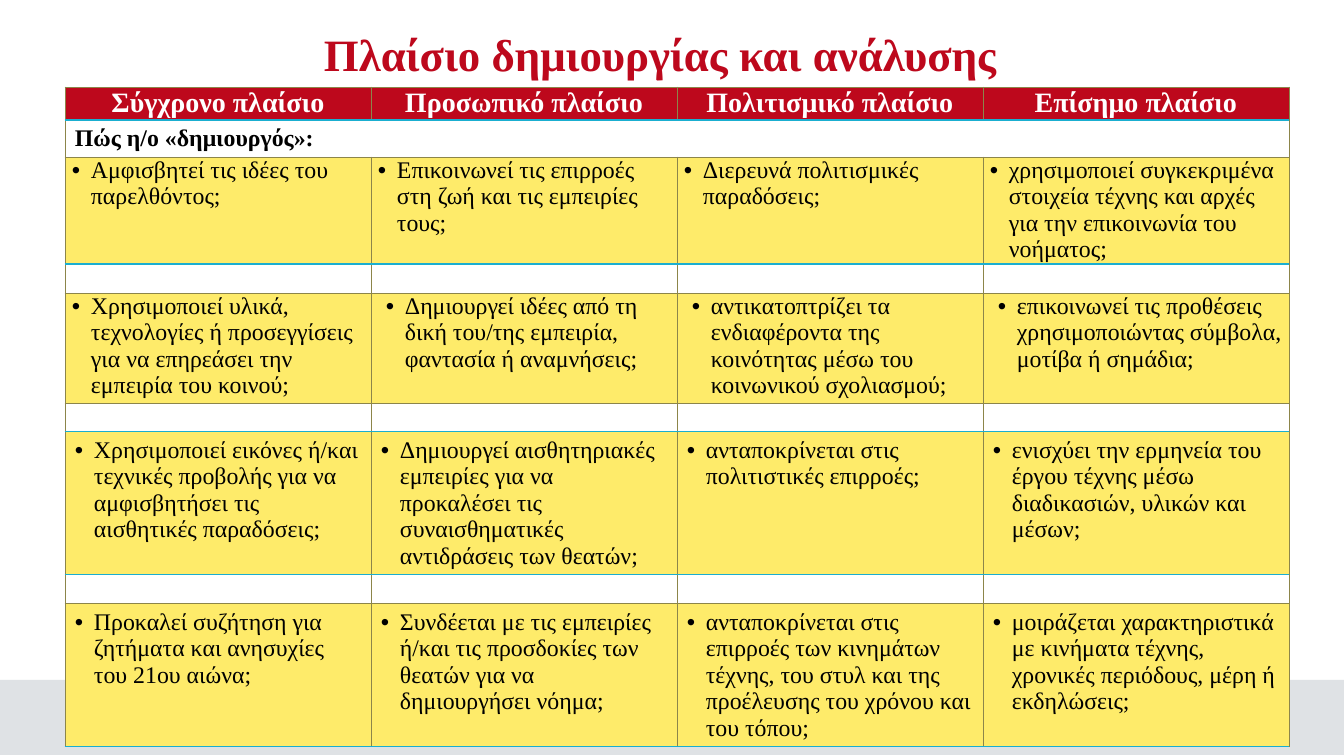
import pptx
import pptx.util
import pptx.dml.color
import pptx.enum.shapes
import pptx.enum.text
import pptx.oxml
import pptx.oxml.ns

RGB = pptx.dml.color.RGBColor
RED = RGB(0xBD, 0x08, 0x1C)
YELLOW = RGB(0xFE, 0xEB, 0x6A)
WHITE = RGB(0xFF, 0xFF, 0xFF)
BLACK = RGB(0, 0, 0)
GREY = RGB(0xDF, 0xE2, 0xE5)
CYAN = RGB(0x1A, 0xAE, 0xD0)
LINE = RGB(0x8C, 0x85, 0x4A)

FONT = "Times New Roman"
ALIGN = pptx.enum.text.PP_ALIGN
ANCHOR = pptx.enum.text.MSO_ANCHOR
TITLE = "Πλαίσιο δημιουργίας και ανάλυσης"
HEADERS = ["Σύγχρονο πλαίσιο", "Προσωπικό πλαίσιο", "Πολιτισμικό πλαίσιο", "Επίσημο πλαίσιο"]
QUESTION = "Πώς η/ο «δημιουργός»:"
BLOCKS = [
    ["Αμφισβητεί τις ιδέες του παρελθόντος;",
     "Επικοινωνεί τις επιρροές στη ζωή και τις εμπειρίες τους;",
     "Διερευνά πολιτισμικές παραδόσεις;",
     "χρησιμοποιεί συγκεκριμένα στοιχεία τέχνης και αρχές για την επικοινωνία του νοήματος;"],
    ["Χρησιμοποιεί υλικά, τεχνολογίες ή προσεγγίσεις για να επηρεάσει την εμπειρία του κοινού;",
     "Δημιουργεί ιδέες από τη δική του/της εμπειρία, φαντασία ή αναμνήσεις;",
     "αντικατοπτρίζει τα ενδιαφέροντα της κοινότητας μέσω του κοινωνικού σχολιασμού;",
     "επικοινωνεί τις προθέσεις χρησιμοποιώντας σύμβολα, μοτίβα ή σημάδια;"],
    ["Χρησιμοποιεί εικόνες ή/και τεχνικές προβολής για να αμφισβητήσει τις αισθητικές παραδόσεις;",
     "Δημιουργεί αισθητηριακές εμπειρίες για να προκαλέσει τις συναισθηματικές αντιδράσεις των θεατών;",
     "ανταποκρίνεται στις πολιτιστικές επιρροές;",
     "ενισχύει την ερμηνεία του έργου τέχνης μέσω διαδικασιών, υλικών και μέσων;"],
    ["Προκαλεί συζήτηση για ζητήματα και ανησυχίες του 21ου αιώνα;",
     "Συνδέεται με τις εμπειρίες ή/και τις προσδοκίες των θεατών για να δημιουργήσει νόημα;",
     "ανταποκρίνεται στις επιρροές των κινημάτων τέχνης, του στυλ και της προέλευσης του χρόνου και του τόπου;",
     "μοιράζεται χαρακτηριστικά με κινήματα τέχνης, χρονικές περιόδους, μέρη ή εκδηλώσεις;"],
]
BLOCK_HEIGHTS = [107, 110, 143, 143]
BLOCK_MARGINS = [(7, 0), (7, 0), (10, 5), (10, 5)]
HEADER_H, QUESTION_H, GAP_H = 33, 37, 29
COL_W, TABLE_X, TABLE_Y = 306, 65, 87
BULLET_INDENT = 19
CYAN_EDGES = {1, 3, 6, 7, 9}


def px(n):
    """Turn pixels into EMU."""
    return round(n * 914400 / 100.8)


def write(tf, text, size=17, color=BLACK, bold=False, align=ALIGN.LEFT, spacing=None, indent=0):
    """Write one formatted paragraph, bulleted when indented."""
    p = tf.paragraphs[0]
    p.alignment = align
    p.line_spacing = spacing
    if indent:
        pPr = p._p.get_or_add_pPr()
        pPr.set("marL", str(px(indent)))
        pPr.set("indent", str(-px(BULLET_INDENT)))
        for tag, attr, value in (("buFont", "typeface", "Arial"), ("buChar", "char", "•")):
            pptx.oxml.ns.qn("a:" + tag)
            pPr.append(pptx.oxml.parse_xml(
                f'<a:{tag} {pptx.oxml.ns.nsdecls("a")} {attr}="{value}"/>'))
    r = p.add_run()
    r.text = text
    r.font.name = FONT
    r.font.size = pptx.util.Pt(size)
    r.font.bold = bold
    r.font.color.rgb = color


def edge(cell, side, color, width):
    """Draw one border of a cell."""
    cell._tc.get_or_add_tcPr().append(pptx.oxml.parse_xml(
        f'<a:ln{side} {pptx.oxml.ns.nsdecls("a")} w="{pptx.util.Pt(width)}">'
        f'<a:solidFill><a:srgbClr val="{color}"/></a:solidFill></a:ln{side}>'))


def style(cell, row, fill, margins):
    """Set the borders, fill and margins of a cell."""
    for side, index in (("L", None), ("R", None), ("T", row), ("B", row + 1)):
        cyan = index in CYAN_EDGES
        edge(cell, side, CYAN if cyan else LINE, 1 if cyan else 0.5)
    cell.fill.solid()
    cell.fill.fore_color.rgb = fill
    cell.margin_left = cell.margin_right = px(margins[0])
    cell.margin_top = cell.margin_bottom = px(margins[1])


def add_table(s):
    """Add the table of frameworks."""
    rows = [(HEADER_H, RED, (6, 0), HEADERS), (QUESTION_H, WHITE, (10, 5), [QUESTION] + [""] * 3)]
    for i, block in enumerate(BLOCKS):
        if i:
            rows.append((GAP_H, WHITE, (7, 0), [""] * 4))
        rows.append((BLOCK_HEIGHTS[i], YELLOW, BLOCK_MARGINS[i], block))
    height = sum(row[0] for row in rows)
    table = s.shapes.add_table(len(rows), 4, px(TABLE_X), px(TABLE_Y), px(4 * COL_W), px(height)).table
    table.first_row = table.horz_banding = False
    for col in table.columns:
        col.width = px(COL_W)
    for y, (row_h, fill, margins, texts) in enumerate(rows):
        table.rows[y].height = px(row_h)
        for x, text in enumerate(texts):
            cell = table.cell(y, x)
            style(cell, y, fill, margins)
            tf = cell.text_frame
            if not text:
                tf.paragraphs[0]._p.get_or_add_endParaRPr().set("sz", "1000")
            elif y == 0:
                cell.vertical_anchor = ANCHOR.MIDDLE
                write(tf, text, size=20, color=WHITE, bold=True, align=ALIGN.CENTER)
            elif y == 1:
                write(tf, text, bold=True)
            else:
                shifted = texts is BLOCKS[1] and x > 0
                write(tf, text, indent=BULLET_INDENT + (8 if shifted else 0))
    table.cell(1, 0).merge(table.cell(1, 3))


def main():
    """Build the slide."""
    prs = pptx.Presentation()
    prs.slide_width, prs.slide_height = px(1344), px(756)
    s = prs.slides.add_slide(prs.slide_layouts[5])
    title = s.shapes.title
    title.left, title.top, title.width, title.height = px(79), px(29), px(1163), px(59)
    title.text_frame.vertical_anchor = ANCHOR.MIDDLE
    write(title.text_frame, TITLE, size=32, color=RED, bold=True, align=ALIGN.CENTER, spacing=0.8)
    bar = s.shapes.add_shape(pptx.enum.shapes.MSO_SHAPE.RECTANGLE, 0, px(680), px(1344), px(75))
    bar.shadow.inherit = False
    bar.fill.solid()
    bar.fill.fore_color.rgb = GREY
    bar.line.fill.background()
    add_table(s)
    prs.save("out.pptx")


if __name__ == "__main__":
    main()
